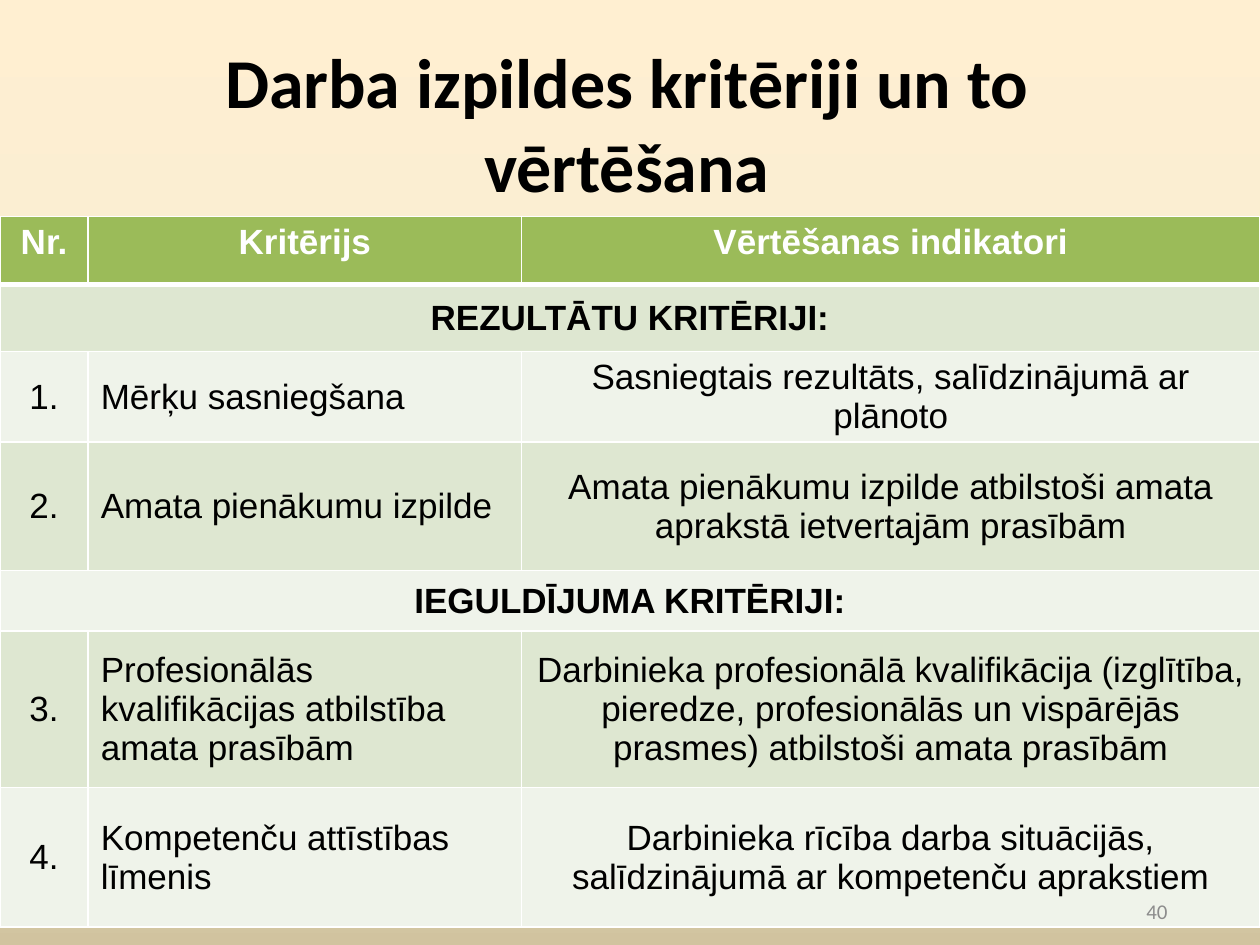
from copy import deepcopy
from dataclasses import dataclass

from lxml import etree
from pptx import Presentation
from pptx.dml.color import RGBColor
from pptx.enum import text
from pptx.oxml import ns
from pptx.util import Inches, Pt

COLORS = {
    "sky": "FFEFD1", "cream": "F0EBD5", "sand": "D1C39F",
    "header": "9BBB59", "band": "DEE7D1", "pale": "EFF3EA",
    "white": "FFFFFF", "black": "000000", "gray": "8C8C8C",
}
BACKGROUND_STOPS = [(0, "sky"), (0.65, "cream"), (1, "sand")]
COLUMN_WIDTHS = [0.7, 3.44, 5.86]
CENTER, LEFT = text.PP_ALIGN.CENTER, text.PP_ALIGN.LEFT


@dataclass
class Row:
    height: float
    texts: list[str]

    @property
    def is_section(self) -> bool:
        return len(self.texts) == 1


ROWS = [
    Row(0.54, ["Nr.", "Kritērijs", "Vērtēšanas indikatori"]),
    Row(0.53, ["REZULTĀTU KRITĒRIJI:"]),
    Row(0.57, ["1.", "Mērķu sasniegšana",
               "Sasniegtais rezultāts, salīdzinājumā ar plānoto"]),
    Row(1.02, ["2.", "Amata pienākumu izpilde",
               "Amata pienākumu izpilde atbilstoši amata aprakstā ietvertajām prasībām"]),
    Row(0.48, ["IEGULDĪJUMA KRITĒRIJI:"]),
    Row(1.24, ["3.", "Profesionālās kvalifikācijas atbilstība amata prasībām",
               "Darbinieka profesionālā kvalifikācija (izglītība, pieredze, "
               "profesionālās un vispārējās prasmes) atbilstoši amata prasībām"]),
    Row(1.11, ["4.", "Kompetenču attīstības līmenis",
               "Darbinieka rīcība darba situācijās, salīdzinājumā ar kompetenču aprakstiem"]),
]


def rgb(name: str) -> RGBColor:
    return RGBColor.from_string(COLORS[name])


def write(frame, words: str, font: str, size: float, color: str,
          bold: bool = False, align=LEFT) -> None:
    frame.text = words
    paragraph = frame.paragraphs[0]
    paragraph.alignment = align
    for span in paragraph.runs:
        span.font.name = font
        span.font.size = Pt(size)
        span.font.bold = bold
        span.font.color.rgb = rgb(color)


def paint_background(page) -> None:
    fill = page.background.fill
    fill.gradient()
    fill.gradient_angle = 270
    stop_list = page.background._cSld.find(".//" + ns.qn("a:gsLst"))
    stop_list.append(deepcopy(stop_list[-1]))
    for stop, (position, color) in zip(fill.gradient_stops, BACKGROUND_STOPS):
        stop.position = position
        stop.color.rgb = rgb(color)


def add_borders(cell, bottom: float) -> None:
    """Draw white cell borders; widths are in points."""
    properties = cell._tc.get_or_add_tcPr()
    widths = {"lnL": 1, "lnR": 1, "lnT": 1, "lnB": bottom}
    for index, (side, width) in enumerate(widths.items()):
        line = etree.Element(ns.qn(f"a:{side}"), w=str(Pt(width)))
        fill = etree.SubElement(line, ns.qn("a:solidFill"))
        etree.SubElement(fill, ns.qn("a:srgbClr"), val=COLORS["white"])
        properties.insert(index, line)


def add_criteria_table(page) -> None:
    table = page.shapes.add_table(
        len(ROWS), len(COLUMN_WIDTHS), Inches(0), Inches(1.72),
        Inches(sum(COLUMN_WIDTHS)), Inches(sum(row.height for row in ROWS))).table
    for column, width in zip(table.columns, COLUMN_WIDTHS):
        column.width = Inches(width)
    for r, row in enumerate(ROWS):
        table.rows[r].height = Inches(row.height)
        is_header = r == 0
        shade = "header" if is_header else "band" if r % 2 else "pale"
        for c in range(len(COLUMN_WIDTHS)):
            cell = table.cell(r, c)
            cell.fill.solid()
            cell.fill.fore_color.rgb = rgb(shade)
            add_borders(cell, 3 if is_header else 1)
        if row.is_section:
            table.cell(r, 0).merge(table.cell(r, len(COLUMN_WIDTHS) - 1))
        for c, words in enumerate(row.texts):
            cell = table.cell(r, c)
            if not is_header:
                cell.vertical_anchor = text.MSO_ANCHOR.MIDDLE
            write(cell.text_frame, words, "Arial", 20,
                  "white" if is_header else "black",
                  bold=is_header or row.is_section,
                  align=LEFT if c == 1 and not is_header else CENTER)


def add_title(page) -> None:
    title = page.shapes.title
    title.left, title.top = Inches(0.5), Inches(0.31)
    title.width, title.height = Inches(8.95), Inches(1.33)
    frame = title.text_frame
    frame.margin_left = frame.margin_right = Inches(0.2)
    frame.vertical_anchor = text.MSO_ANCHOR.MIDDLE
    write(frame, "Darba izpildes kritēriji un to vērtēšana",
          "Calibri", 40, "black", bold=True, align=CENTER)


def add_page_number(page) -> None:
    box = page.shapes.add_textbox(Inches(9), Inches(7.08), Inches(0.83), Inches(0.27))
    box.text_frame.word_wrap = True
    write(box.text_frame, "40", "Calibri", 12, "gray")


def main() -> None:
    deck = Presentation()
    deck.slide_width, deck.slide_height = Inches(10), Inches(7.5)
    page = deck.slides.add_slide(deck.slide_layouts[5])
    paint_background(page)
    add_title(page)
    add_criteria_table(page)
    add_page_number(page)
    deck.save("out.pptx")


if __name__ == "__main__":
    main()
